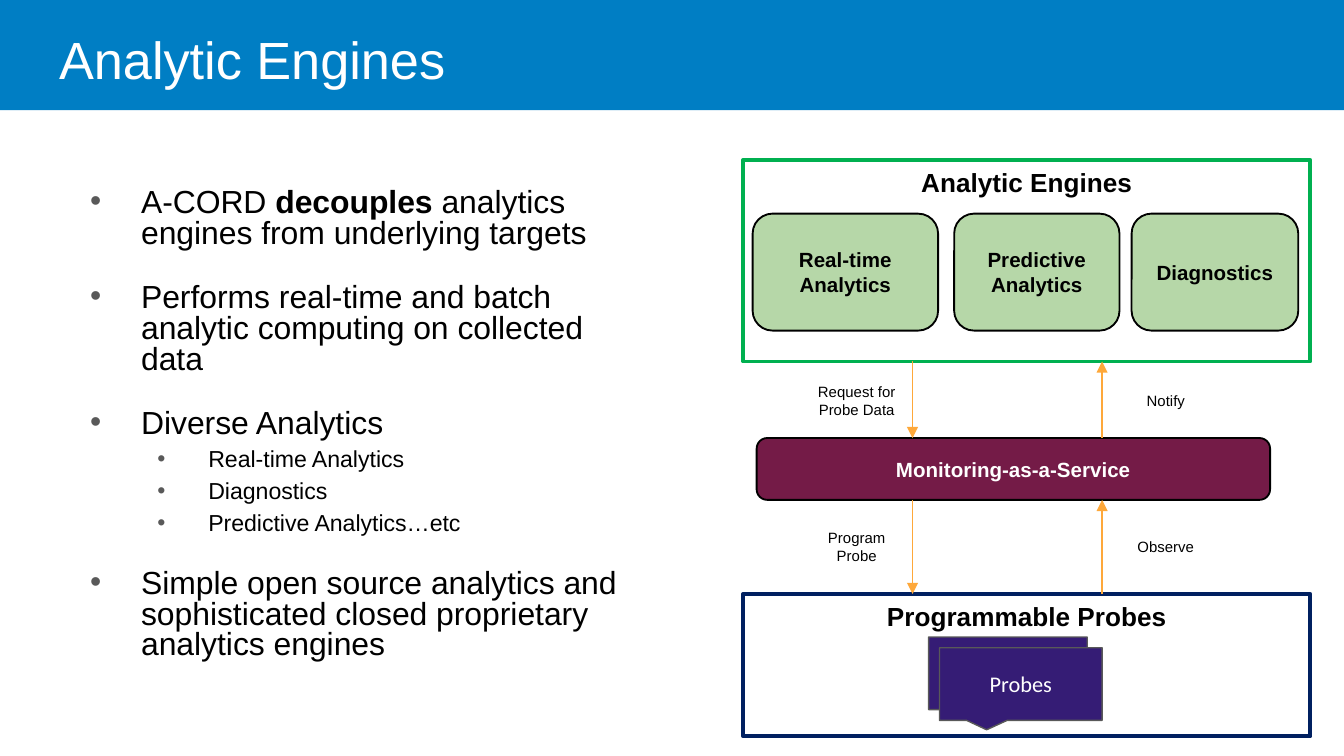
from lxml import etree
from pptx import Presentation
from pptx.dml.color import RGBColor
from pptx.enum.shapes import MSO_CONNECTOR, MSO_SHAPE
from pptx.enum.text import MSO_ANCHOR, MSO_AUTO_SIZE, PP_ALIGN
from pptx.oxml.ns import qn
from pptx.util import Pt

RECT = MSO_SHAPE.RECTANGLE
ROUNDED = MSO_SHAPE.ROUNDED_RECTANGLE
CALLOUT = MSO_SHAPE.RECTANGULAR_CALLOUT
STRAIGHT = MSO_CONNECTOR.STRAIGHT
TOP, MIDDLE = MSO_ANCHOR.TOP, MSO_ANCHOR.MIDDLE
LEFT, CENTER = PP_ALIGN.LEFT, PP_ALIGN.CENTER
NO_FIT = MSO_AUTO_SIZE.NONE

PX = 9144  # 100 px to the inch
COLORS = {
    "white": "FFFFFF", "black": "000000", "band": "007EC4", "green": "00B050",
    "engine": "B6D7A8", "service": "741B47", "navy": "002060",
    "probe": "351C75", "gray": "595959", "arrow": "FEA83A",
}


def color(name):
    return RGBColor.from_string(COLORS[name])


class SlideBuilder:
    """Holds the style and the current slide."""

    def __init__(self, page, font="Arial", inset=10):
        self.page = page
        self.font = font
        self.inset = inset

    def place(self, shape, area):
        shape.left, shape.top, shape.width, shape.height = [v * PX for v in area]

    def frame(self, shape, anchor, inset_y=None):
        frame = shape.text_frame
        frame.word_wrap = True
        frame.auto_size = NO_FIT
        frame.vertical_anchor = anchor
        frame.margin_left = frame.margin_right = self.inset * PX
        vertical = self.inset if inset_y is None else inset_y
        frame.margin_top = frame.margin_bottom = vertical * PX
        return frame

    def style(self, para, size, ink, bold=False, font=None, align=CENTER):
        para.alignment = align
        for span in para.runs:
            span.font.name = font or self.font
            span.font.size = Pt(size)
            span.font.bold = bold
            span.font.color.rgb = color(ink)

    def title(self, text, area):
        shape = self.page.shapes.title
        self.place(shape, area)
        frame = self.frame(shape, TOP)
        frame.text = text
        self.style(frame.paragraphs[0], 28, "white", align=LEFT)

    def bullets(self, items, area):
        shape = self.page.placeholders[1]
        self.place(shape, area)
        frame = self.frame(shape, TOP)
        for index, (level, text, before, after) in enumerate(items):
            para = frame.paragraphs[0] if index == 0 else frame.add_paragraph()
            para.level = level
            # Every second piece between asterisks is bold
            for piece in text.split("*"):
                para.add_run().text = piece
            self.bullet(para, 88 if level else 38)
            para.line_spacing = 0.95 if level else 0.8
            para.space_before, para.space_after = Pt(before), Pt(after)
            self.style(para, 12.4 if level else 17.1, "black", align=LEFT)
            for span in para.runs[1::2]:
                span.font.bold = True

    def bullet(self, para, indent):
        props = para._p.get_or_add_pPr()
        props.set("marL", str(indent * PX))
        props.set("indent", str(-38 * PX))
        tint = etree.SubElement(props, qn("a:buClr"))
        etree.SubElement(tint, qn("a:srgbClr")).set("val", COLORS["gray"])
        etree.SubElement(props, qn("a:buFont")).set("typeface", self.font)
        etree.SubElement(props, qn("a:buChar")).set("char", "•")

    def box(self, kind, area, fill, line=None, width=1, adjust=()):
        shape = self.page.shapes.add_shape(kind, *[v * PX for v in area])
        shape.shadow.inherit = False
        shape.fill.solid()
        shape.fill.fore_color.rgb = color(fill)
        if line:
            shape.line.color.rgb = color(line)
            shape.line.width = Pt(width)
            etree.SubElement(shape.line._get_or_add_ln(), qn("a:round"))
        else:
            shape.line.fill.background()
        for index, value in enumerate(adjust):
            shape.adjustments[index] = value
        return shape

    def band(self, area, fill):
        shape = self.box(RECT, area, fill)
        self.page.shapes._spTree.insert(2, shape._element)  # behind the title

    def panel(self, text, area, line):
        shape = self.box(RECT, area, "white", line, 2)
        frame = self.frame(shape, TOP, inset_y=5)
        frame.text = text
        self.style(frame.paragraphs[0], 14, "black", bold=True)

    def block(self, text, area, fill, ink):
        shape = self.box(ROUNDED, area, fill, "black", 1, (0.17,))
        frame = self.frame(shape, MIDDLE)
        frame.text = text
        self.style(frame.paragraphs[0], 11, ink, bold=True)

    def callout(self, area, text=None):
        shape = self.box(CALLOUT, area, "probe", "gray", 0.75, (-0.21, 0.63))
        if text:
            frame = self.frame(shape, MIDDLE)
            frame.text = text
            self.style(frame.paragraphs[0], 12, "white", font="Calibri")

    def label(self, text, area):
        shape = self.page.shapes.add_textbox(*[v * PX for v in area])
        frame = self.frame(shape, MIDDLE)
        frame.text = text
        self.style(frame.paragraphs[0], 8, "black")

    def arrow(self, x, start, end):
        line = self.page.shapes.add_connector(
            STRAIGHT, x * PX, start * PX, x * PX, end * PX)
        line.line.color.rgb = color("arrow")
        line.line.width = Pt(0.75)
        tail = etree.SubElement(line.line._get_or_add_ln(), qn("a:tailEnd"))
        tail.set("type", "triangle")
        etree.SubElement(line._element.spPr, qn("a:effectLst"))


def main():
    deck = Presentation()
    deck.slide_width = 1000 * PX
    deck.slide_height = deck.slide_width * 9 // 16
    slide = SlideBuilder(deck.slides.add_slide(deck.slide_layouts[1]))

    # Heading
    slide.band((0, 0, 1000, 82), "band")
    slide.title("Analytic Engines", (34, 10, 932, 63))

    # Bullet list: level, text, space before, space after
    slide.bullets([
        (0, "A-CORD *decouples* analytics engines from underlying targets", 0, 18),
        (0, "Performs real-time and batch analytic computing on collected data", 0, 18),
        (0, "Diverse Analytics", 0, 3),
        (1, "Real-time Analytics", 0, 3),
        (1, "Diagnostics", 0, 3),
        (1, "Predictive Analytics…etc", 0, 0),
        (0, "Simple open source analytics and sophisticated closed proprietary "
            "analytics engines", 18, 0),
    ], (57, 131, 433, 396))

    # Analytic engines
    slide.panel("Analytic Engines", (553, 119, 422, 150), "green")
    for text, left, width in (("Predictive Analytics", 710, 123),
                              ("Real-time Analytics", 560, 138),
                              ("Diagnostics", 842, 124)):
        slide.block(text, (left, 159, width, 87), "engine", "black")

    # Monitoring service
    slide.block("Monitoring-as-a-Service", (563, 326, 382, 46), "service", "white")

    # Probes
    slide.panel("Programmable Probes", (553, 442, 422, 106), "navy")
    slide.callout((691, 474, 118, 54))
    slide.callout((699, 482, 121, 54), "Probes")

    # Messages between the layers: down on the left, up on the right
    for upper, lower, label_top, down, up in (
            (269, 326, 275, "Request for Probe Data", "Notify"),
            (372, 442, 384, "Program Probe", "Observe")):
        slide.arrow(679, upper, lower)
        slide.arrow(820, lower, upper)
        slide.label(down, (596, label_top, 83, 46))
        slide.label(up, (826, label_top, 83, 46))

    deck.save("out.pptx")


if __name__ == "__main__":
    main()
